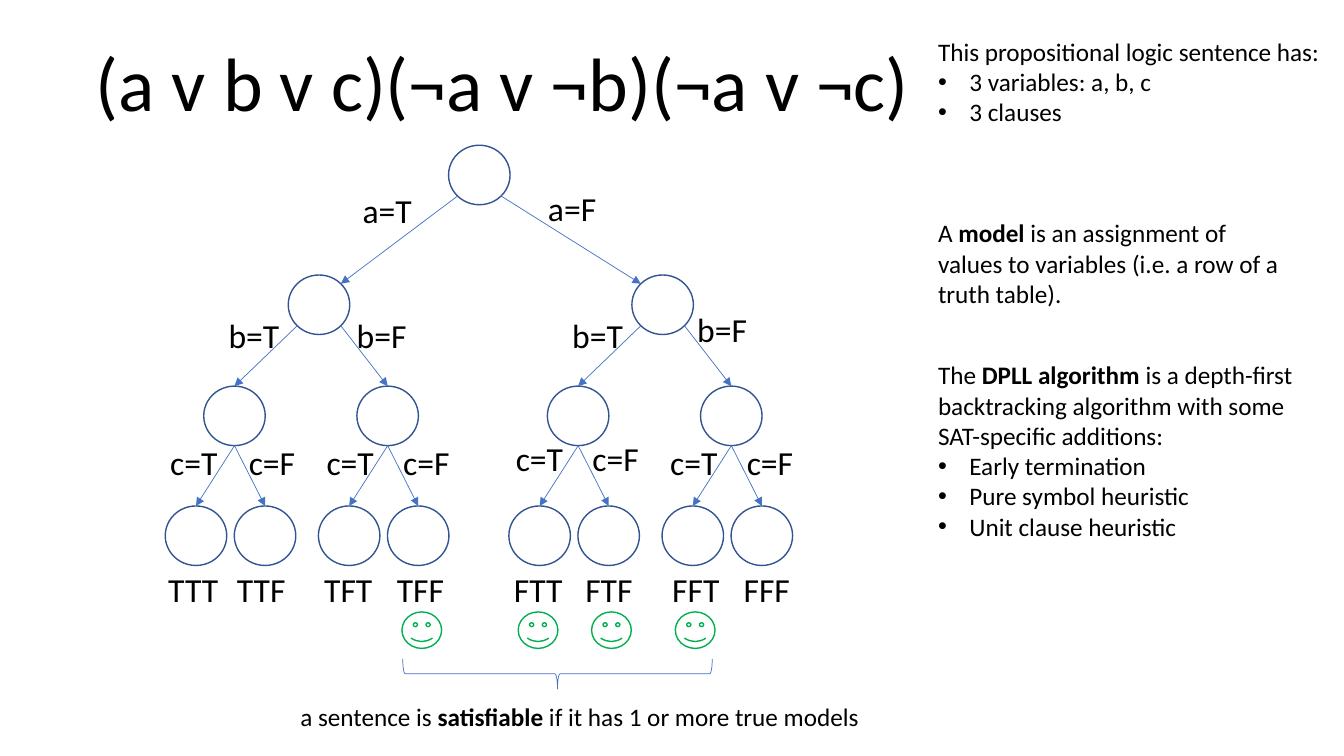
from lxml import etree
from pptx import Presentation
from pptx.dml.color import RGBColor
from pptx.enum.shapes import MSO_CONNECTOR, MSO_SHAPE
from pptx.enum.text import MSO_ANCHOR, MSO_AUTO_SIZE, PP_ALIGN
from pptx.oxml.ns import qn
from pptx.util import Cm, Pt

OVAL = MSO_SHAPE.OVAL
SMILE = MSO_SHAPE.SMILEY_FACE
BRACE = MSO_SHAPE.LEFT_BRACE
LINE = MSO_CONNECTOR.STRAIGHT
TOP = MSO_ANCHOR.TOP
LEFT = PP_ALIGN.LEFT
FIT = MSO_AUTO_SIZE.SHAPE_TO_FIT_TEXT

BLACK = RGBColor(0x00, 0x00, 0x00)
NAVY = RGBColor(0x32, 0x54, 0x91)
BLUE = RGBColor(0x44, 0x72, 0xC4)
GREEN = RGBColor(0x00, 0xB0, 0x50)
FONT = "Calibri"

# Tree sizes in cm: node size, row centres, child steps per level
NODE_W, NODE_H = 1.55, 1.5
DIAG_X, DIAG_Y = 0.55, 0.53
ROWS = [4.41, 7.68, 10.48, 13.5]
STEPS = [(-4.04, 4.62), (-2.13, 1.73), (-0.97, 0.77)]

# Branch labels: text, left, top in cm
BRANCHES = [
    ("a=T", 8.89, 4.65), ("a=F", 13.56, 4.6),
    ("b=T", 5.51, 7.8), ("b=F", 8.74, 7.82),
    ("b=T", 14.17, 7.8), ("b=F", 17.32, 7.67),
    ("c=T", 4.04, 11.0), ("c=F", 6.02, 11.0),
    ("c=T", 7.98, 11.0), ("c=F", 9.91, 11.0),
    ("c=T", 12.75, 10.9), ("c=F", 14.68, 10.9),
    ("c=T", 16.64, 11.0), ("c=F", 18.57, 11.0),
]
MODELS = [("TTT", 3.99), ("TTF", 5.72), ("TFT", 7.92), ("TFF", 9.75),
          ("FTT", 12.7), ("FTF", 14.5), ("FFT", 16.69), ("FFF", 18.49)]
SMILES = [10.13, 13.06, 14.91, 17.02]

# Notes: left, top, width, height, then paragraphs of (bullet, runs)
NOTES = [
    ((23.39, 0.79, 10.24, 2.57), [
        (False, [("This propositional logic sentence has:", False)]),
        (True, [("3 variables: a, b, c", False)]),
        (True, [("3 clauses", False)])]),
    ((23.39, 5.36, 9.19, 2.57), [
        (False, [("A ", False), ("model", True),
                 (" is an assignment of", False)]),
        (False, [("values to variables (i.e. a row of a\ntruth table).",
                  False)])]),
    ((23.39, 8.94, 9.47, 4.88), [
        (False, [("The ", False), ("DPLL algorithm ", True),
                 ("is a depth-first\nbacktracking algorithm with some\n"
                  "SAT-specific additions:", False)]),
        (True, [("Early termination", False)]),
        (True, [("Pure symbol heuristic", False)]),
        (True, [("Unit clause heuristic", False)])]),
    ((7.32, 17.55, 14.76, 1.02), [
        (False, [("a sentence is ", False), ("satisfiable", True),
                 (" if it has 1 or more true models", False)])]),
]


def add_run(para, text, size, bold=False):
    for i, part in enumerate(text.split("\n")):
        if i:
            para.add_line_break()
        run = para.add_run()
        run.text = part
        font = run.font
        font.name, font.size, font.bold = FONT, Pt(size), bold
        font.color.rgb = BLACK


def add_bullet(para):
    props = para._p.get_or_add_pPr()
    props.set("marL", str(Cm(0.79)))
    props.set("indent", str(-Cm(0.79)))
    etree.SubElement(props, qn("a:buFont")).set("typeface", "Arial")
    etree.SubElement(props, qn("a:buChar")).set("char", "•")


def add_text(slide, box, paras, size):
    frame = slide.shapes.add_textbox(*map(Cm, box)).text_frame
    frame.word_wrap = False
    frame.auto_size = FIT
    for i, (bullet, runs) in enumerate(paras):
        para = frame.add_paragraph() if i else frame.paragraphs[0]
        if bullet:
            add_bullet(para)
        for text, bold in runs:
            add_run(para, text, size, bold)


def add_label(slide, text, left, top):
    add_text(slide, (left, top, 1.78, 1.27), [(False, [(text, False)])], 24)


def add_outline(slide, kind, box, color, width):
    shape = slide.shapes.add_shape(kind, *map(Cm, box))
    shape.shadow.inherit = False
    shape.fill.background()
    shape.line.color.rgb = color
    shape.line.width = Pt(width)
    return shape


def add_arrow(slide, start, end):
    arrow = slide.shapes.add_connector(LINE, *map(Cm, start + end))
    arrow.line.color.rgb = BLUE
    arrow.line.width = Pt(0.5)
    tail = etree.SubElement(arrow.line._get_or_add_ln(), qn("a:tailEnd"))
    tail.set("type", "triangle")
    etree.SubElement(arrow._element.spPr, qn("a:effectLst"))
    return arrow


def add_tree(slide, x, level=0):
    """Draw a node with its whole subtree and return the node."""
    y = ROWS[level]
    box = (x - NODE_W / 2, y - NODE_H / 2, NODE_W, NODE_H)
    node = add_outline(slide, OVAL, box, NAVY, 1)
    if level == len(STEPS):
        return node
    for side, step in zip((-1, 1), STEPS[level]):
        child = add_tree(slide, x + step, level + 1)
        start = (x + side * DIAG_X, y + DIAG_Y)
        if level == 2:
            start = (x, y + NODE_H / 2)
        end = (x + step - side * DIAG_X, ROWS[level + 1] - DIAG_Y)
        arrow = add_arrow(slide, start, end)
        if level > 0:
            arrow.end_connect(child, 0)
    return node


def set_title(slide, text):
    title = slide.shapes.title
    title.left, title.top = Cm(2.16), Cm(0.79)
    title.width, title.height = Cm(21.23), Cm(2.57)
    frame = title.text_frame
    frame.word_wrap = False
    frame.auto_size = FIT
    frame.vertical_anchor = TOP
    para = frame.paragraphs[0]
    para.alignment = LEFT
    para.line_spacing = 1.0
    add_run(para, text, 54)


def main():
    deck = Presentation()
    deck.slide_width, deck.slide_height = Cm(33.87), Cm(19.05)
    slide = deck.slides.add_slide(deck.slide_layouts[5])
    set_title(slide, "(a v b v c)(¬a v ¬b)(¬a v ¬c)")

    # Search tree with its labels
    add_tree(slide, 12.08)
    for text, left, top in BRANCHES:
        add_label(slide, text, left, top)
    for text, left in MODELS:
        add_label(slide, text, left, 14.22)

    # True models and the brace below them
    for left in SMILES:
        add_outline(slide, SMILE, (left, 15.42, 1.0, 0.92), GREEN, 1)
    brace = add_outline(slide, BRACE, (13.67, 13.08, 0.76, 7.8), BLUE, 0.5)
    brace.rotation = 270

    # Notes
    for box, paras in NOTES:
        add_text(slide, box, paras, 18)
    deck.save("out.pptx")


if __name__ == "__main__":
    main()
